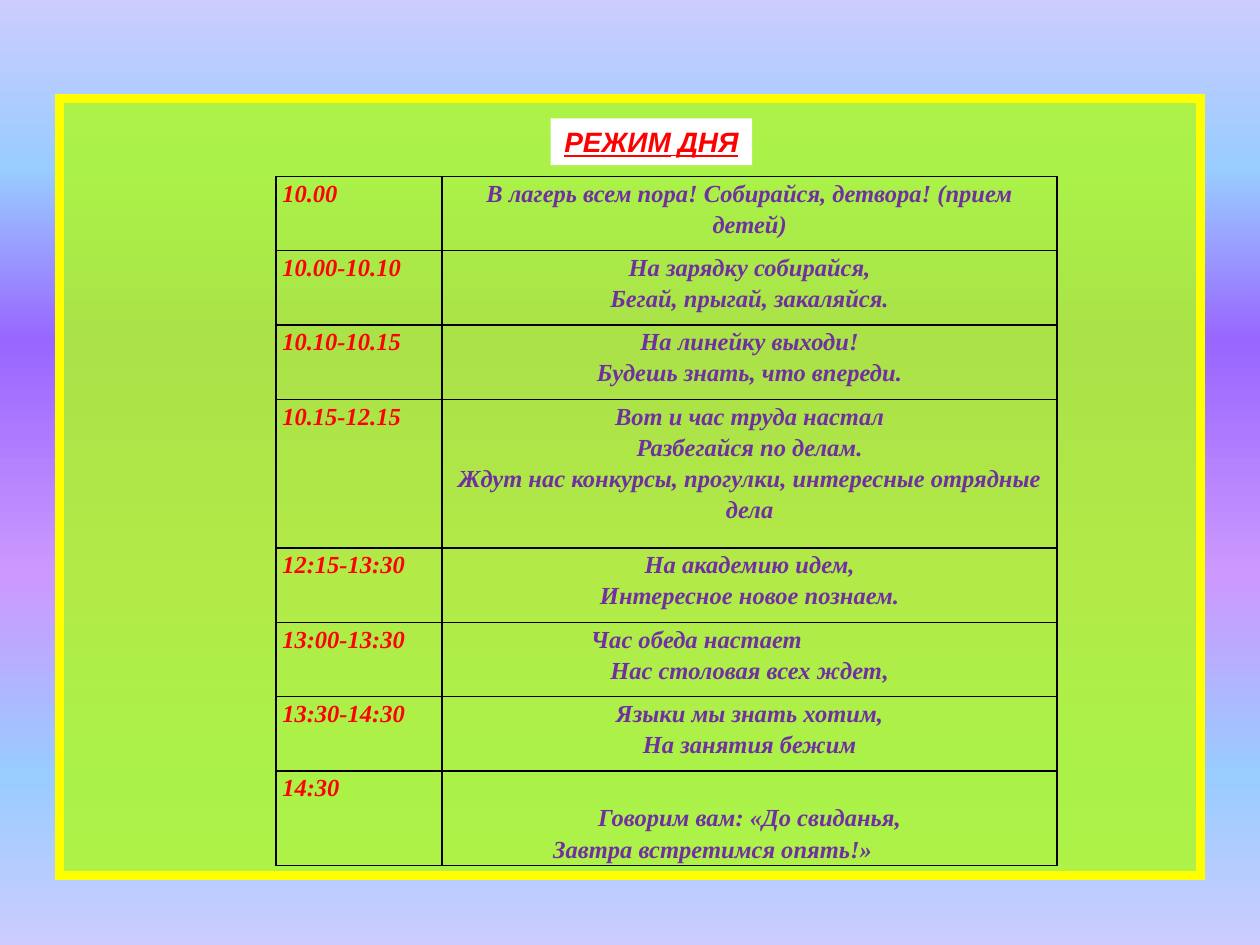
from lxml.etree import SubElement
from pptx import Presentation
from pptx.dml.color import RGBColor
from pptx.enum.shapes import MSO_SHAPE
from pptx.enum.text import MSO_ANCHOR, MSO_AUTO_SIZE, PP_ALIGN
from pptx.oxml import parse_xml
from pptx.oxml.ns import nsdecls, qn
from pptx.util import Inches, Pt

RED = RGBColor(0xFF, 0x00, 0x00)
PURPLE = RGBColor(0x70, 0x30, 0xA0)
GREEN = RGBColor(0xAE, 0xFA, 0x26)
YELLOW = RGBColor(0xFF, 0xFF, 0x00)
WHITE = RGBColor(0xFF, 0xFF, 0xFF)
BLACK = RGBColor(0x00, 0x00, 0x00)
SKY = [
    (0, RGBColor(0xCC, 0xCC, 0xFF)),
    (18, RGBColor(0x99, 0xCC, 0xFF)),
    (36, RGBColor(0x99, 0x66, 0xFF)),
    (61, RGBColor(0xCC, 0x99, 0xFF)),
    (82, RGBColor(0x99, 0xCC, 0xFF)),
    (100, RGBColor(0xCC, 0xCC, 0xFF)),
]

ROW = Inches(0.59)
COLUMNS = [Inches(1.32), Inches(4.88)]

# Time, height in grid rows, lines of the rhyme
SCHEDULE = [
    ("10.00", 1, ["В лагерь всем пора! Собирайся, детвора! (прием детей)"]),
    ("10.00-10.10", 1, ["На зарядку собирайся,", "Бегай, прыгай, закаляйся."]),
    ("10.10-10.15", 1, ["На линейку выходи!", "Будешь знать, что впереди."]),
    ("10.15-12.15", 2, ["Вот и час труда настал", "Разбегайся по делам.",
                        "Ждут нас конкурсы, прогулки, интересные отрядные дела"]),
    ("12:15-13:30", 1, ["На академию идем,", "Интересное новое познаем."]),
    ("13:00-13:30", 1, ["Час обеда настает", "Нас столовая всех ждет,"]),
    ("13:30-14:30", 1, ["Языки мы знать хотим,", "На занятия бежим"]),
    ("14:30", 1.27, ["Говорим вам: «До свиданья,", "Завтра встретимся опять!»"]),
]
# Lines set from the left with an indent instead of centred
INDENTS = {"Час обеда настает": Inches(1.13),
           "Завтра встретимся опять!»": Inches(0.83)}


def style_cell(cell, lines, color):
    """Write the lines and give the cell black borders and no fill."""
    cell.margin_left = cell.margin_right = Inches(0.05)
    cell.margin_top = cell.margin_bottom = 0
    properties = cell._tc.get_or_add_tcPr()
    for side in ("lnL", "lnR", "lnT", "lnB"):
        border = SubElement(properties, qn(f"a:{side}"), w=str(Pt(1)))
        fill = SubElement(border, qn("a:solidFill"))
        SubElement(fill, qn("a:srgbClr"), val=str(BLACK))
    cell.fill.background()
    cell.text_frame.text = "\n".join(lines)
    for paragraph in cell.text_frame.paragraphs:
        paragraph.line_spacing = 1.15
        font = paragraph.runs[0].font
        font.name = "Times New Roman"
        font.size = Pt(14)
        font.bold = font.italic = True
        font.color.rgb = color


presentation = Presentation()
presentation.slide_width = Inches(10)
presentation.slide_height = Inches(7.5)
slide = presentation.slides.add_slide(presentation.slide_layouts[5])

# Background gradient
background = slide.background.fill
background.gradient()
background.gradient_angle = 270
stops = background._fill._gradFill.find(qn("a:gsLst"))
for stop in list(stops):
    stops.remove(stop)
for position, color in SKY:
    stops.append(parse_xml(
        f'<a:gs {nsdecls("a")} pos="{position * 1000}"><a:srgbClr val="{color}"/></a:gs>'))

# Title
title = slide.shapes.title
title.left, title.top = Inches(4.37), Inches(0.94)
title.width, title.height = Inches(1.6), Inches(0.37)
title.fill.solid()
title.fill.fore_color.rgb = WHITE
frame = title.text_frame
frame.word_wrap = False
frame.auto_size = MSO_AUTO_SIZE.NONE
frame.vertical_anchor = MSO_ANCHOR.MIDDLE
heading = frame.paragraphs[0]
heading.alignment = PP_ALIGN.CENTER
for text, typeface in (("РЕЖИМ", "Arial"), (" ", "Roboto"), ("ДНЯ", "Arial")):
    run = heading.add_run()
    run.text = text
    run.font.name = typeface
    run.font.size = Pt(16)
    run.font.bold = run.font.italic = run.font.underline = True
    run.font.color.rgb = RED

# Green panel behind everything
panel = slide.shapes.add_shape(
    MSO_SHAPE.RECTANGLE, Inches(0.47), Inches(0.78), Inches(9.06), Inches(6.17))
panel.shadow.inherit = False
panel.fill.solid()
panel.fill.fore_color.rgb = GREEN
green = panel.element.spPr.find(qn("a:solidFill")).find(qn("a:srgbClr"))
SubElement(green, qn("a:alpha"), val="84000")
panel.line.color.rgb = YELLOW
panel.line.width = Pt(5.25)
SubElement(panel.element.spPr.find(qn("a:ln")), qn("a:miter"), lim="800000")
title.element.addprevious(panel.element)

# Schedule table
height = int(sum(rows for _, rows, _ in SCHEDULE) * ROW)
table = slide.shapes.add_table(
    len(SCHEDULE), len(COLUMNS), Inches(2.19), Inches(1.4), sum(COLUMNS), height).table
table.first_row = table.horz_banding = False
for column, width in zip(table.columns, COLUMNS):
    column.width = width
for index, (time, rows, lines) in enumerate(SCHEDULE):
    table.rows[index].height = int(rows * ROW)
    time_cell, rhyme_cell = table.rows[index].cells
    style_cell(time_cell, [time], RED)
    time_cell.text_frame.paragraphs[0].space_after = Pt(10)
    style_cell(rhyme_cell, lines, PURPLE)
    for paragraph in rhyme_cell.text_frame.paragraphs:
        if paragraph.text in INDENTS:
            paragraph._p.get_or_add_pPr().set("marL", str(INDENTS[paragraph.text]))
        else:
            paragraph.alignment = PP_ALIGN.CENTER
# The farewell starts one text line lower
rhyme_cell.margin_top = Inches(0.24)

presentation.save("out.pptx")
